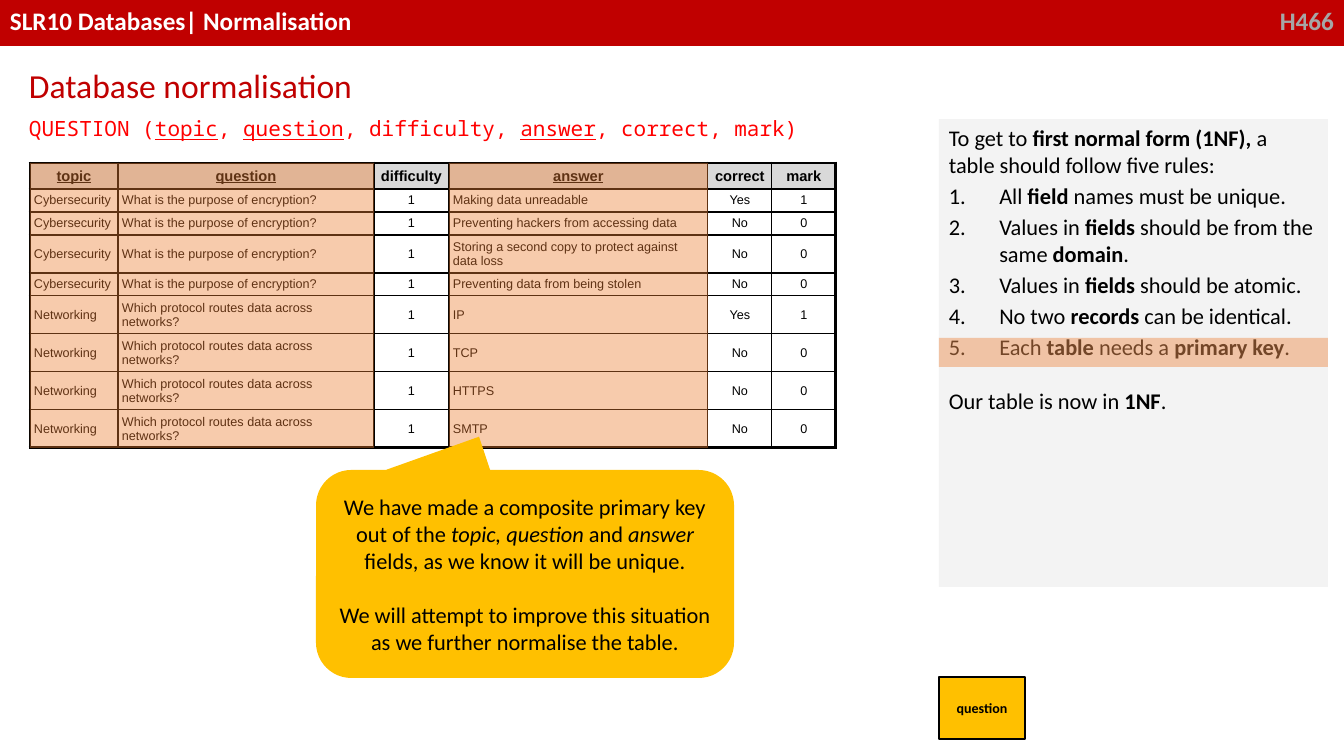
import pptx
import pptx.dml.color
import pptx.enum.shapes
import pptx.enum.text
import pptx.oxml.ns
import pptx.util
from lxml import etree

# Asterisks enclose the emphasised words.
COURSE = "H466"
TOPIC = "SLR10 Databases| Normalisation"
HEADING = "Database normalisation"
SCHEMA = "QUESTION (*topic*, *question*, difficulty, *answer*, correct, mark)"
INTRO = "To get to *first normal form (1NF), *a table should follow five rules:"
RULES = [
    "All *field* names must be unique.",
    "Values in *fields* should be from the same *domain*.",
    "Values in *fields* should be atomic.",
    "No two *records* can be identical.",
    "Each *table *needs a *primary key*.",
]
RESULT = "Our table is now in *1NF*."
REMARKS = [
    "We have made a composite primary key out of the *topic, question* and *answer *"
    "fields, as we know it will be unique.",
    "We will attempt to improve this situation as we further normalise the table.",
]
ENTITY = "question"
FIELDS = ["*topic*", "*question*", "difficulty", "*answer*", "correct", "mark"]
QUIZZES = [
    ("Cybersecurity", "What is the purpose of encryption?", [
        ("Making data unreadable", "Yes", "1"),
        ("Preventing hackers from accessing data", "No", "0"),
        ("Storing a second copy to protect against data loss", "No", "0"),
        ("Preventing data from being stolen", "No", "0")]),
    ("Networking", "Which protocol routes data across networks?", [
        ("IP", "Yes", "1"), ("TCP", "No", "0"),
        ("HTTPS", "No", "0"), ("SMTP", "No", "0")]),
]
RECORDS = [(topic, question, "1", *answer)
           for topic, question, answers in QUIZZES for answer in answers]

THEME = {
    "red": "C00000", "grey": "A6A6A6", "white": "FFFFFF", "black": "000000",
    "header": "D9D9D9", "panel": "F2F2F2", "rule": "222222", "schema": "FF0000",
    "orange": "ED7D31", "gold": "FFC000",
    "sans": "Calibri", "grid": "Arial", "mono": "Noto Sans Mono",
    "bar_size": 18, "heading_size": 24, "schema_size": 15, "body_size": 16,
    "head_size": 10.5, "cell_size": 9, "entity_size": 10,
}
PX = 914400 / 100.8
TABLE_LEFT, TABLE_TOP = 30, 163
COLUMNS = [88, 256, 75, 259, 64, 64]
ROWS = [26, 23, 23, 38, 23, 38, 38, 38, 38]
TEXT_COLUMNS = (0, 1, 3)
PANEL_LEFT, PANEL_WIDTH = 939, 389
RULE_GAP, LINE_GAP = 3, 19.5
CELL_INSET = 4
HAIR, MEDIUM, THICK = 1, 1.5, 2.25

ALIGN = pptx.enum.text.PP_ALIGN
ANCHOR = pptx.enum.text.MSO_ANCHOR
SHAPE = pptx.enum.shapes.MSO_SHAPE
qn = pptx.oxml.ns.qn


def px(length):
    return round(length * PX)


def rgb(name):
    return pptx.dml.color.RGBColor.from_string(THEME[name])


def write(frame, text, size="body_size", color="black", font="sans", bold=False,
          emphasis="bold", align=ALIGN.LEFT, before=0, after=0, spacing=None,
          numbered=False):
    """Add one paragraph, using the empty first one when it is still free."""
    paragraph = frame.paragraphs[0]
    if paragraph.runs:
        paragraph = frame.add_paragraph()
    paragraph.alignment = align
    paragraph.space_before = pptx.util.Pt(before)
    paragraph.space_after = pptx.util.Pt(after)
    if spacing:
        paragraph.line_spacing = spacing
    if numbered:
        properties = paragraph._p.get_or_add_pPr()
        properties.set("marL", "457200")
        properties.set("indent", "-457200")
        etree.SubElement(properties, qn("a:buAutoNum"), type="arabicPeriod")
    for index, words in enumerate(text.split("*")):
        if not words:
            continue
        run = paragraph.add_run()
        run.text = words
        run.font.name = THEME[font]
        run.font.size = pptx.util.Pt(THEME[size])
        run.font.color.rgb = rgb(color)
        run.font.bold = bold
        if index % 2:
            setattr(run.font, emphasis, True)


def block(slide, box, fill, opacity=100, line=None, kind=SHAPE.RECTANGLE,
          anchor=ANCHOR.TOP):
    shape = slide.shapes.add_shape(kind, *map(px, box))
    shape.shadow.inherit = False
    shape.fill.solid()
    shape.fill.fore_color.rgb = rgb(fill)
    if opacity < 100:
        tint = shape.fill._xPr.find(".//" + qn("a:srgbClr"))
        etree.SubElement(tint, qn("a:alpha"), val=str(opacity * 1000))
    if line:
        shape.line.color.rgb = rgb("black")
        shape.line.width = pptx.util.Pt(line)
    else:
        shape.line.fill.background()
    shape.text_frame.word_wrap = True
    shape.text_frame.vertical_anchor = anchor
    return shape


def border(cell, **widths):
    properties = cell._tc.get_or_add_tcPr()
    for position, side in enumerate("LRTB"):
        edge = etree.Element(qn("a:ln" + side), w=str(pptx.util.Pt(widths[side])))
        ink = etree.SubElement(edge, qn("a:solidFill"))
        etree.SubElement(ink, qn("a:srgbClr"), val=THEME["black"])
        properties.insert(position, edge)


def add_records(slide):
    records = [FIELDS, *RECORDS]
    grid = slide.shapes.add_table(
        len(ROWS), len(COLUMNS), px(TABLE_LEFT), px(TABLE_TOP),
        px(sum(COLUMNS)), px(sum(ROWS))).table
    grid.first_row = grid.horz_banding = False
    for column, width in zip(grid.columns, COLUMNS):
        column.width = px(width)
    last_row, last_column = len(ROWS) - 1, len(COLUMNS) - 1
    for r, (record, height) in enumerate(zip(records, ROWS)):
        grid.rows[r].height = px(height)
        for c, value in enumerate(record):
            cell = grid.cell(r, c)
            cell.margin_left = cell.margin_right = px(CELL_INSET)
            cell.margin_top = cell.margin_bottom = px(CELL_INSET)
            cell.vertical_anchor = ANCHOR.MIDDLE
            if r == 0:
                cell.fill.solid()
                cell.fill.fore_color.rgb = rgb("header")
            else:
                cell.fill.background()
            write(cell.text_frame, value, font="grid", bold=r == 0,
                  size="cell_size" if r else "head_size", emphasis="underline",
                  align=ALIGN.LEFT if r and c in TEXT_COLUMNS else ALIGN.CENTER)
            border(cell, L=HAIR if c else THICK,
                   R=THICK if c == last_column else HAIR,
                   T={0: THICK, 1: MEDIUM}.get(r, HAIR),
                   B={0: MEDIUM, last_row: THICK}.get(r, HAIR))


def main():
    deck = pptx.Presentation()
    deck.slide_width, deck.slide_height = px(1344), px(756)
    slide = deck.slides.add_slide(deck.slide_layouts[6])

    course = block(slide, (1116, 0, 228, 46), "red")
    write(course.text_frame, COURSE, size="bar_size", color="grey", bold=True,
          align=ALIGN.RIGHT)
    topic = block(slide, (0, 0, 1163, 46), "red")
    write(topic.text_frame, TOPIC, size="bar_size", color="white", bold=True)

    add_records(slide)

    rules = block(slide, (PANEL_LEFT, 119, PANEL_WIDTH, 468), "panel", opacity=90).text_frame
    write(rules, INTRO, before=RULE_GAP)
    for rule in RULES:
        write(rules, rule, before=RULE_GAP, numbered=True,
              color="rule" if rule == RULES[-1] else "black")
    write(rules, RESULT, before=LINE_GAP)

    heading = block(slide, (19, 57, 930, 51), "white", opacity=70)
    write(heading.text_frame, HEADING, size="heading_size", color="red",
          spacing=1.07, after=8)
    block(slide, (PANEL_LEFT, 338, PANEL_WIDTH, 29), "orange", opacity=40)

    schema = slide.shapes.add_textbox(*map(px, (19, 111, 884, 35))).text_frame
    schema.word_wrap = True
    write(schema, SCHEMA, size="schema_size", color="schema", font="mono",
          emphasis="underline", before=RULE_GAP)

    entity = block(slide, (PANEL_LEFT, 677, 86, 62), "gold", line=MEDIUM,
                   anchor=ANCHOR.MIDDLE)
    write(entity.text_frame, ENTITY, size="entity_size", bold=True, align=ALIGN.CENTER)

    for first, stop in ((0, 2), (3, 4)):
        key_left = TABLE_LEFT + sum(COLUMNS[:first])
        block(slide, (key_left, TABLE_TOP, sum(COLUMNS[first:stop]), sum(ROWS)),
              "orange", opacity=40)

    callout = block(slide, (316, 470, 418, 208), "gold", anchor=ANCHOR.MIDDLE,
                    kind=SHAPE.ROUNDED_RECTANGULAR_CALLOUT)
    for index, amount in enumerate((-0.11, -0.66, 0.17)):
        callout.adjustments[index] = amount
    for index, remark in enumerate(REMARKS):
        write(callout.text_frame, remark, emphasis="italic", align=ALIGN.CENTER,
              before=LINE_GAP * index)

    deck.save("out.pptx")


if __name__ == "__main__":
    main()
